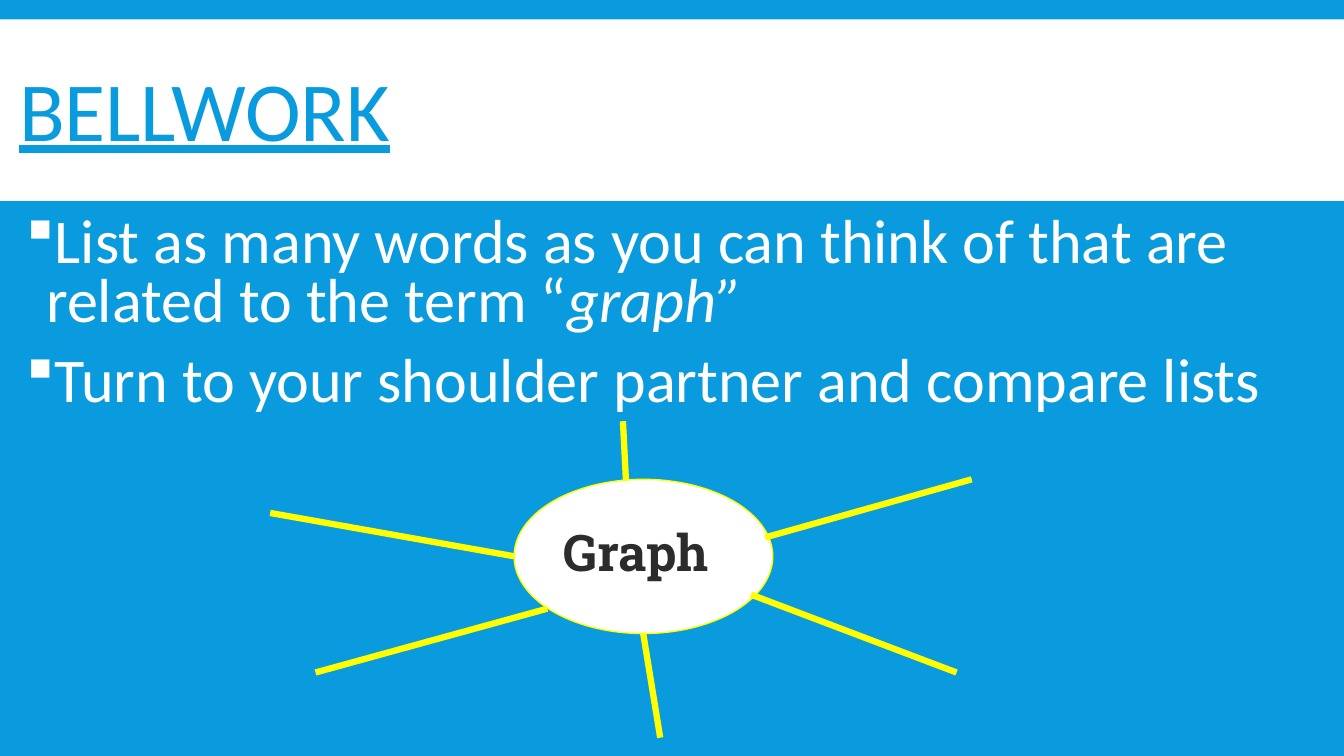
from dataclasses import dataclass

from lxml.etree import SubElement
from pptx import Presentation
from pptx.dml.color import RGBColor
from pptx.enum.shapes import MSO_CONNECTOR as Connector, MSO_SHAPE as Shape
from pptx.enum.text import MSO_ANCHOR as Anchor
from pptx.oxml.ns import qn
from pptx.util import Inches, Pt


@dataclass(frozen=True)
class Theme:
    blue: str = "099BDD"
    white: str = "FFFFFF"
    yellow: str = "FFFF00"
    ink: str = "2C2C2C"
    text_font: str = "Calibri"
    label_font: str = "Roboto Slab"
    bullet_font: str = "Wingdings"
    square_bullet: str = "§"  # drawn as a small square in the bullet font
    title_size: float = 60
    body_size: float = 44.4
    label_size: float = 36
    outline: float = 1
    ray: float = 4.5


class Page:
    """One slide, measured in square cells: 40 columns by 22.5 rows."""

    columns = 40

    def __init__(self, deck, theme):
        self.theme = theme
        self.cell = deck.slide_width / self.columns
        self.slide = deck.slides.add_slide(deck.slide_layouts[6])
        fill = self.slide.background.fill
        fill.solid()
        fill.fore_color.rgb = RGBColor.from_string(theme.blue)

    def lengths(self, *cells):
        return [round(count * self.cell) for count in cells]

    def shape(self, kind, place, color, outline=None):
        shape = self.slide.shapes.add_shape(kind, *self.lengths(*place))
        shape.shadow.inherit = False
        shape.fill.solid()
        shape.fill.fore_color.rgb = RGBColor.from_string(color)
        if outline:
            shape.line.color.rgb = RGBColor.from_string(outline)
            shape.line.width = Pt(self.theme.outline)
        else:
            shape.line.fill.background()

    def text(self, place, paragraphs, size, color, font, anchor=Anchor.TOP,
             spacing=1.0, bullet=None, **style):
        """Each paragraph is a list of (words, italic) spans."""
        box = self.slide.shapes.add_textbox(*self.lengths(*place))
        frame = box.text_frame
        frame.word_wrap = True
        frame.vertical_anchor = anchor
        for index, spans in enumerate(paragraphs):
            para = frame.add_paragraph() if index else frame.paragraphs[0]
            para.line_spacing = spacing
            para.font.size = Pt(size)
            para.font.name = font
            para.font.color.rgb = RGBColor.from_string(color)
            for name, value in style.items():
                setattr(para.font, name, value)
            for words, italic in spans:
                span = para.add_run()
                span.text = words
                if italic:
                    span.font.italic = True
            if bullet:
                self.bullet(para, bullet)

    def bullet(self, para, mark):
        para.space_before, para.space_after = Pt(12), Pt(2)
        properties = para._p.get_or_add_pPr()
        properties.set("marL", str(Inches(0.2)))
        properties.set("indent", str(-Inches(0.2)))
        # Bullet elements must come before the paragraph's default run style
        run_style = properties.find(qn("a:defRPr"))
        font = SubElement(properties, qn("a:buFont"),
                          typeface=self.theme.bullet_font, charset="2")
        run_style.addprevious(font)
        run_style.addprevious(SubElement(properties, qn("a:buChar"), char=mark))

    def ray(self, start, end):
        line = self.slide.shapes.add_connector(
            Connector.STRAIGHT, *self.lengths(*start, *end))
        line.line.color.rgb = RGBColor.from_string(self.theme.yellow)
        line.line.width = Pt(self.theme.ray)
        SubElement(line._element.spPr, qn("a:effectLst"))


def main():
    theme = Theme()
    deck = Presentation()
    deck.slide_width, deck.slide_height = Inches(13.33), Inches(7.5)
    page = Page(deck, theme)

    # Title band
    page.shape(Shape.RECTANGLE, (0, 0.58, 40, 5.4), theme.white)
    page.text((0.27, 0.96, 32.1, 4.95), [[("BELLWORK", False)]],
              theme.title_size, theme.blue, theme.text_font,
              anchor=Anchor.MIDDLE, spacing=0.85, underline=True)

    # Instructions
    tasks = [
        [("List as many words as you can think of that are related to the term “", False),
         ("graph”", True)],
        [("Turn to your shoulder partner and compare lists", False)],
    ]
    page.text((0.48, 6.27, 38.46, 6.63), tasks, theme.body_size, theme.white,
              theme.text_font, spacing=0.8, bullet=theme.square_bullet)

    # Word web: hub, label, then rays from the hub outwards
    page.shape(Shape.OVAL, (15.3, 14.27, 7.7, 4.59), theme.white, theme.yellow)
    page.text((16.47, 15.36, 5.7, 2.13), [[("Graph", False)]],
              theme.label_size, theme.ink, theme.label_font, bold=True)
    rays = [
        ((22.77, 16), (28.92, 14.27)),
        ((15.3, 16.56), (8.04, 15.27)),
        ((22.35, 17.7), (28.47, 20.02)),
        ((16.29, 18.12), (9.39, 20.02)),
        ((18.63, 14.31), (18.54, 12.54)),
        ((19.14, 18.84), (19.65, 21.96)),
    ]
    for start, end in rays:
        page.ray(start, end)

    deck.save("out.pptx")


if __name__ == "__main__":
    main()
